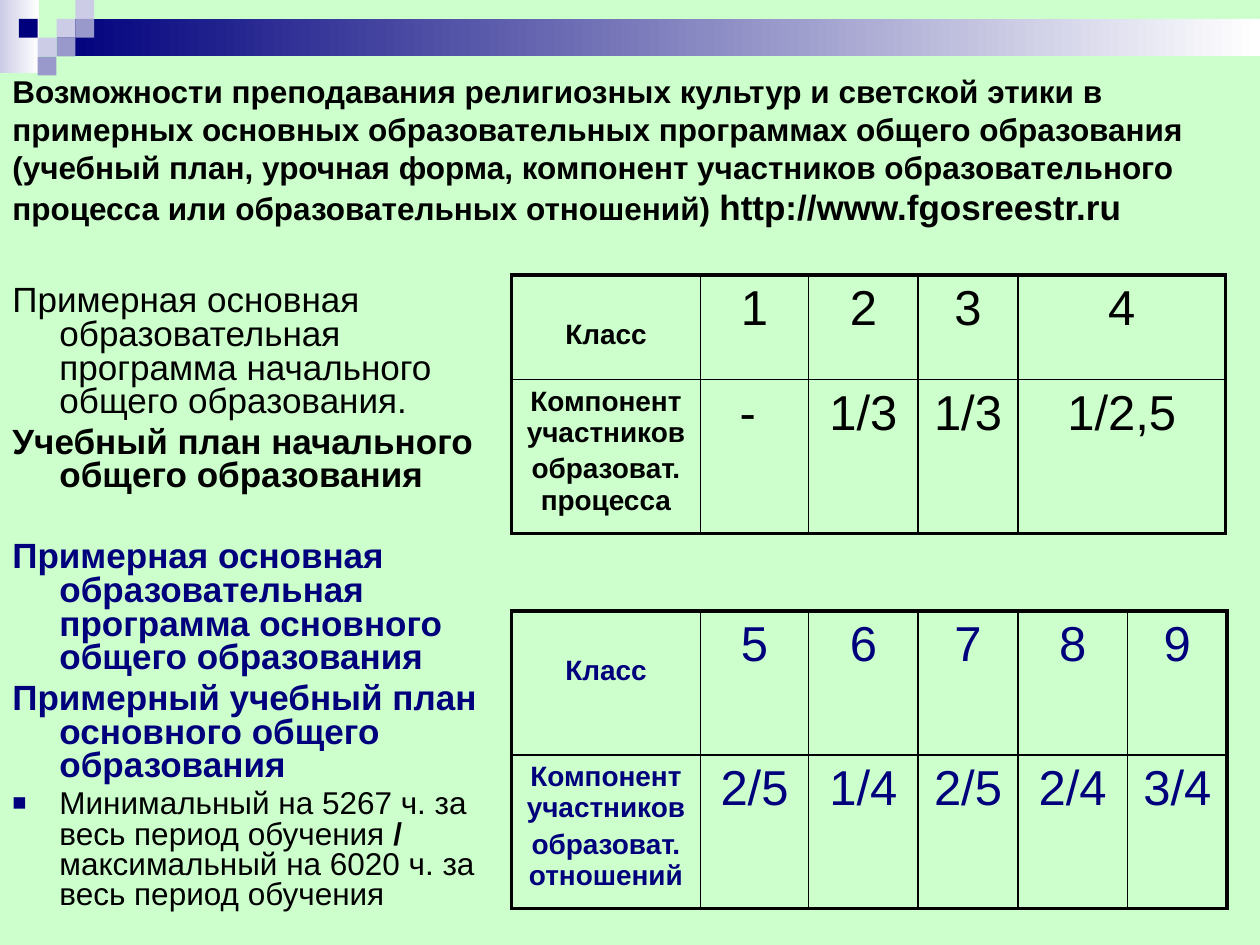
from lxml.etree import SubElement
from pptx import Presentation
from pptx.dml.color import RGBColor
from pptx.enum.shapes import MSO_SHAPE
from pptx.enum.text import MSO_ANCHOR, PP_ALIGN
from pptx.oxml import parse_xml
from pptx.oxml.ns import nsdecls, qn
from pptx.util import Cm, Pt

THEME = {
    "font": "Arial", "back": "CCFFCC", "ink": "000000", "navy": "00007D",
    "pale": "CCCCE6", "mid": "9999CC", "white": "FFFFFF",
    "small": 16, "text": 18, "large": 20, "digit": 28,
    "thin": 1, "thick": 2.25,
}

TITLE = [
    ("Возможности преподавания религиозных культур и светской этики в "
     "примерных основных образовательных программах общего образования "
     "(учебный план, урочная форма, компонент участников образовательного "
     "процесса или образовательных отношений) ", "text", "ink", True),
    ("http://www.fgosreestr.ru", "large", "ink", True),
]

# Each paragraph: space before in points, bullet, runs
BODY = [
    (4, False, [("Примерная основная образовательная программа начального "
                 "общего образования.", "large", "ink", False)]),
    (4, False, [("Учебный план начального общего образования",
                 "large", "ink", True)]),
    (27, False, [("Примерная основная образовательная программа основного "
                  "общего образования", "large", "navy", True)]),
    (4, False, [("Примерный учебный план основного общего образования",
                 "large", "navy", True)]),
    (3.6, True, [("Минимальный на 5267 ч. за весь период обучения ",
                  "text", "ink", False),
                 ("/", "text", "ink", True),
                 (" максимальный на 6020 ч. за весь период обучения",
                  "text", "ink", False)]),
]

TABLES = [
    {"top": 5.54, "color": "ink",
     "cols": [3.81, 2.18, 2.21, 2.01, 4.19], "rows": [2.11, 3.1],
     "cells": [["Класс", "1", "2", "3", "4"],
               ["Компонент участников\nобразоват. процесса",
                "- ", "1/3", "1/3", "1/2,5"]]},
    {"top": 12.32, "color": "navy",
     "cols": [3.81, 2.18, 2.21, 2.01, 2.21, 2.01], "rows": [2.9, 3.1],
     "cells": [["Класс", "5", "6", "7", "8", "9"],
               ["Компонент участников\nобразоват. отношений",
                "2/5", "1/4", "2/5", "2/4", "3/4"]]},
]
TABLE_LEFT = 10.31

# Left, top, width, height, colour fading to white
BANDS = [(0, 0, 0.79, 1.47, "pale"), (1.14, 0.38, 24.26, 0.76, "navy")]

# Column and row on a grid of small squares
STEP = 0.38
SQUARES = [(3, 1, "pale"), (4, 0, "pale"), (4, 1, "mid"), (2, 2, "pale"),
           (1, 1, "navy"), (3, 2, "mid"), (2, 3, "mid")]


def tint(name):
    return RGBColor.from_string(THEME[name])


def put(item, **values):
    for name, value in values.items():
        setattr(item, name, value)


def write(para, runs):
    for text, size, color, bold in runs:
        run = para.add_run()
        run.text = text
        put(run.font, name=THEME["font"], size=Pt(THEME[size]), bold=bold)
        run.font.color.rgb = tint(color)


def block(slide, left, top, wide, high):
    box = slide.shapes.add_shape(MSO_SHAPE.RECTANGLE,
                                 Cm(left), Cm(top), Cm(wide), Cm(high))
    box.shadow.inherit = False
    box.line.fill.background()
    return box.fill


def adorn(slide):
    for *place, color in BANDS:
        fill = block(slide, *place)
        fill.gradient()
        fill.gradient_angle = 0
        for stop, name in zip(fill.gradient_stops, (color, "white")):
            stop.color.rgb = tint(name)
    for col, row, color in SQUARES:
        fill = block(slide, col * STEP, row * STEP, STEP, STEP)
        fill.solid()
        fill.fore_color.rgb = tint(color)


def frame(slide, left, top, wide, high, anchor):
    box = slide.shapes.add_textbox(Cm(left), Cm(top), Cm(wide), Cm(high))
    put(box.text_frame, word_wrap=True, vertical_anchor=anchor)
    return box.text_frame


def indent(para, bullet):
    """Set a hanging indent, with a square bullet if asked."""
    props = para._p.get_or_add_pPr()
    props.set("marL", str(Cm(0.95)))
    props.set("indent", str(-Cm(0.95)))
    if not bullet:
        SubElement(props, qn("a:buNone"))
        return
    color = SubElement(props, qn("a:buClr"))
    SubElement(color, qn("a:srgbClr"), val=THEME["navy"])
    SubElement(props, qn("a:buSzPct"), val="75000")
    SubElement(props, qn("a:buFont"), typeface=THEME["font"])
    SubElement(props, qn("a:buChar"), char="■")


def edge(cell, outer):
    """Draw the four borders; the sides named in outer are thick."""
    props = cell._tc.get_or_add_tcPr()
    for spot, side in enumerate("LRTB"):
        width = Pt(THEME["thick" if side in outer else "thin"])
        props.insert(spot, parse_xml(
            f'<a:ln{side} {nsdecls("a")} w="{width}"><a:solidFill>'
            f'<a:srgbClr val="{THEME["ink"]}"/></a:solidFill></a:ln{side}>'))


def grid(slide, top, color, cols, rows, cells):
    table = slide.shapes.add_table(
        len(rows), len(cols), Cm(TABLE_LEFT), Cm(top),
        Cm(sum(cols)), Cm(sum(rows))).table
    put(table, first_row=False, horz_banding=False)
    for col, wide in zip(table.columns, cols):
        col.width = Cm(wide)
    for r, (row, high) in enumerate(zip(table.rows, rows)):
        row.height = Cm(high)
        for c, text in enumerate(cells[r]):
            cell = table.cell(r, c)
            label = c == 0
            size = "small" if label else "digit"
            lower = 0.89 if label and r == 0 else 0.13
            put(cell, margin_left=Cm(0.25), margin_right=Cm(0.25),
                margin_top=Cm(lower), margin_bottom=Cm(0.13))
            cell.fill.background()
            for i, line in enumerate(text.split("\n")):
                area = cell.text_frame
                para = area.add_paragraph() if i else area.paragraphs[0]
                put(para, alignment=PP_ALIGN.CENTER,
                    space_before=Pt(THEME[size] * 0.2 if i else 0))
                write(para, [(line, size, color, label)])
            edge(cell, ("L" if label else "")
                 + ("R" if c == len(cols) - 1 else "")
                 + ("T" if r == 0 else "")
                 + ("B" if r == len(rows) - 1 else ""))


def main():
    deck = Presentation()
    put(deck, slide_width=Cm(25.4), slide_height=Cm(19.05))
    slide = deck.slides.add_slide(deck.slide_layouts[6])
    slide.background.fill.solid()
    slide.background.fill.fore_color.rgb = tint("back")
    adorn(slide)

    title = frame(slide, 0, 1.32, 25.4, 3.4, MSO_ANCHOR.MIDDLE)
    write(title.paragraphs[0], TITLE)

    body = frame(slide, 0, 5.64, 10.31, 13.41, MSO_ANCHOR.TOP)
    for i, (gap, bullet, runs) in enumerate(BODY):
        para = body.add_paragraph() if i else body.paragraphs[0]
        put(para, line_spacing=0.8, space_before=Pt(gap))
        indent(para, bullet)
        write(para, runs)

    for table in TABLES:
        grid(slide, **table)
    deck.save("out.pptx")


if __name__ == "__main__":
    main()
